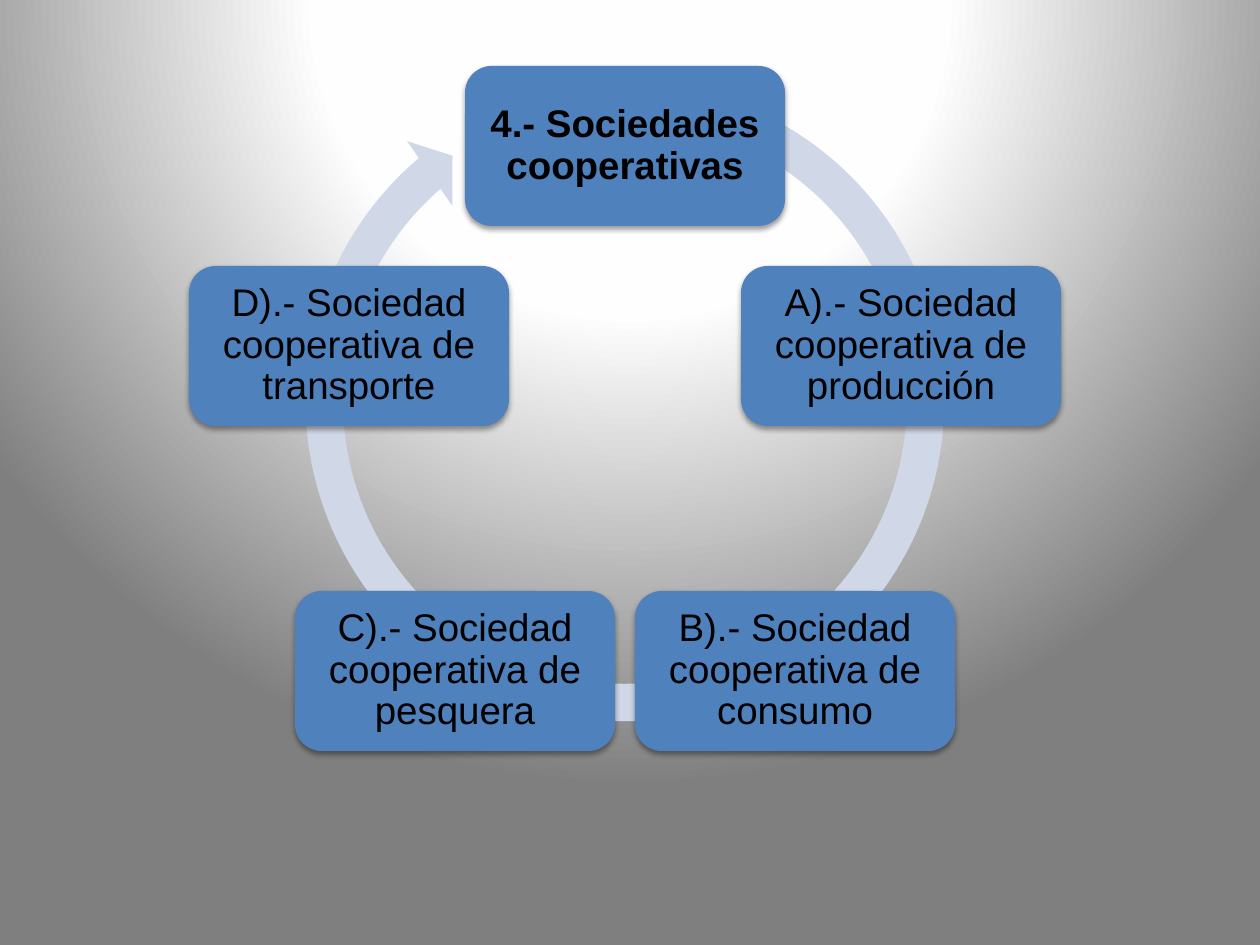
"""Build a slide with a ring of cooperative society types."""
from dataclasses import dataclass
from math import cos, radians, sin

from lxml import etree
from pptx import Presentation
from pptx import util as u
from pptx.dml.color import RGBColor
from pptx.enum import shapes, text
from pptx.oxml import parse_xml
from pptx.oxml.ns import nsdecls, qn

SCALE = u.Inches(1) / 126
HUES = {"box": "4F81BD", "ring": "D0D8E8", "ink": "000000",
        "white": "FFFFFF", "pale": "FEFEFE", "gray": "7F7F7F"}
MID_X, MID_Y, RADIUS = 625, 436, 290
WIDE, HIGH = 320, 160


@dataclass
class Node:
    label: str
    bold: bool = False


NODES = [
    Node("4.- Sociedades cooperativas", True),
    Node("A).- Sociedad cooperativa de producción"),
    Node("B).- Sociedad cooperativa de consumo"),
    Node("C).- Sociedad cooperativa de pesquera"),
    Node("D).- Sociedad cooperativa de transporte"),
]


def px(n: int) -> int:
    return round(n * SCALE)


def rgb(name: str) -> RGBColor:
    return RGBColor.from_string(HUES[name])


def write(shape, words: str, *, size: int = 22, bold: bool = False,
          font: str = "Arial", hue: str = "ink", inset: int = 11) -> None:
    frame = shape.text_frame
    frame.word_wrap = True
    frame.vertical_anchor = text.MSO_ANCHOR.MIDDLE
    frame.margin_left = frame.margin_right = px(inset)
    frame.margin_top = frame.margin_bottom = px(inset)
    para = frame.paragraphs[0]
    para.alignment = text.PP_ALIGN.CENTER
    para.line_spacing = 0.9
    run = para.add_run()
    run.text = words
    run.font.size = u.Pt(size)
    run.font.bold = bold
    run.font.name = font
    run.font.color.rgb = rgb(hue)


def draw(slide, kind, x: int, y: int, w: int, h: int, hue: str):
    shape = slide.shapes.add_shape(kind, px(x), px(y), px(w), px(h))
    shape.shadow.inherit = False
    shape.fill.solid()
    shape.fill.fore_color.rgb = rgb(hue)
    shape.line.fill.background()
    return shape


def shade(shape) -> None:
    glow = shape._element.spPr.find(qn("a:effectLst"))
    drop = etree.SubElement(
        glow, qn("a:outerShdw"), blurRad=str(u.Pt(3.1)),
        dist=str(u.Pt(1.6)), dir="5400000", rotWithShape="0")
    tint = etree.SubElement(drop, qn("a:srgbClr"), val=HUES["ink"])
    etree.SubElement(tint, qn("a:alpha"), val="38000")


def backdrop(slide) -> None:
    fill = slide.background.fill
    fill.gradient()
    old = slide._element.find(".//" + qn("a:gradFill"))
    stops = "".join(
        f'<a:gs pos="{pos * 1000}"><a:srgbClr val="{HUES[hue]}"/></a:gs>'
        for pos, hue in ((0, "white"), (40, "pale"), (100, "gray")))
    new = parse_xml(
        f'<a:gradFill {nsdecls("a")} rotWithShape="1"><a:gsLst>{stops}</a:gsLst>'
        '<a:path path="circle"><a:fillToRect l="50000" t="-80000" '
        'r="50000" b="180000"/></a:path></a:gradFill>')
    old.getparent().replace(old, new)


def ring(slide) -> None:
    arrow = draw(slide, shapes.MSO_SHAPE.CIRCULAR_ARROW,
                 MID_X - 340, 62, 680, 680, "ring")
    for i, value in enumerate((0.055, 3.307, 137.692, 173.9, 0.058)):
        arrow.adjustments[i] = value


def place(slide, node: Node, turn: float) -> None:
    angle = radians(turn)
    x = round(MID_X + RADIUS * sin(angle) - WIDE / 2)
    y = round(MID_Y - RADIUS * cos(angle) - HIGH / 2)
    box = draw(slide, shapes.MSO_SHAPE.ROUNDED_RECTANGLE,
               x, y, WIDE, HIGH, "box")
    shade(box)
    write(box, node.label, bold=node.bold)


def main() -> None:
    deck = Presentation()
    deck.slide_width, deck.slide_height = px(1260), px(945)
    slide = deck.slides.add_slide(deck.slide_layouts[6])
    backdrop(slide)
    ring(slide)
    for i, node in enumerate(NODES):
        place(slide, node, i * 360 / len(NODES))
    deck.save("out.pptx")


if __name__ == "__main__":
    main()
